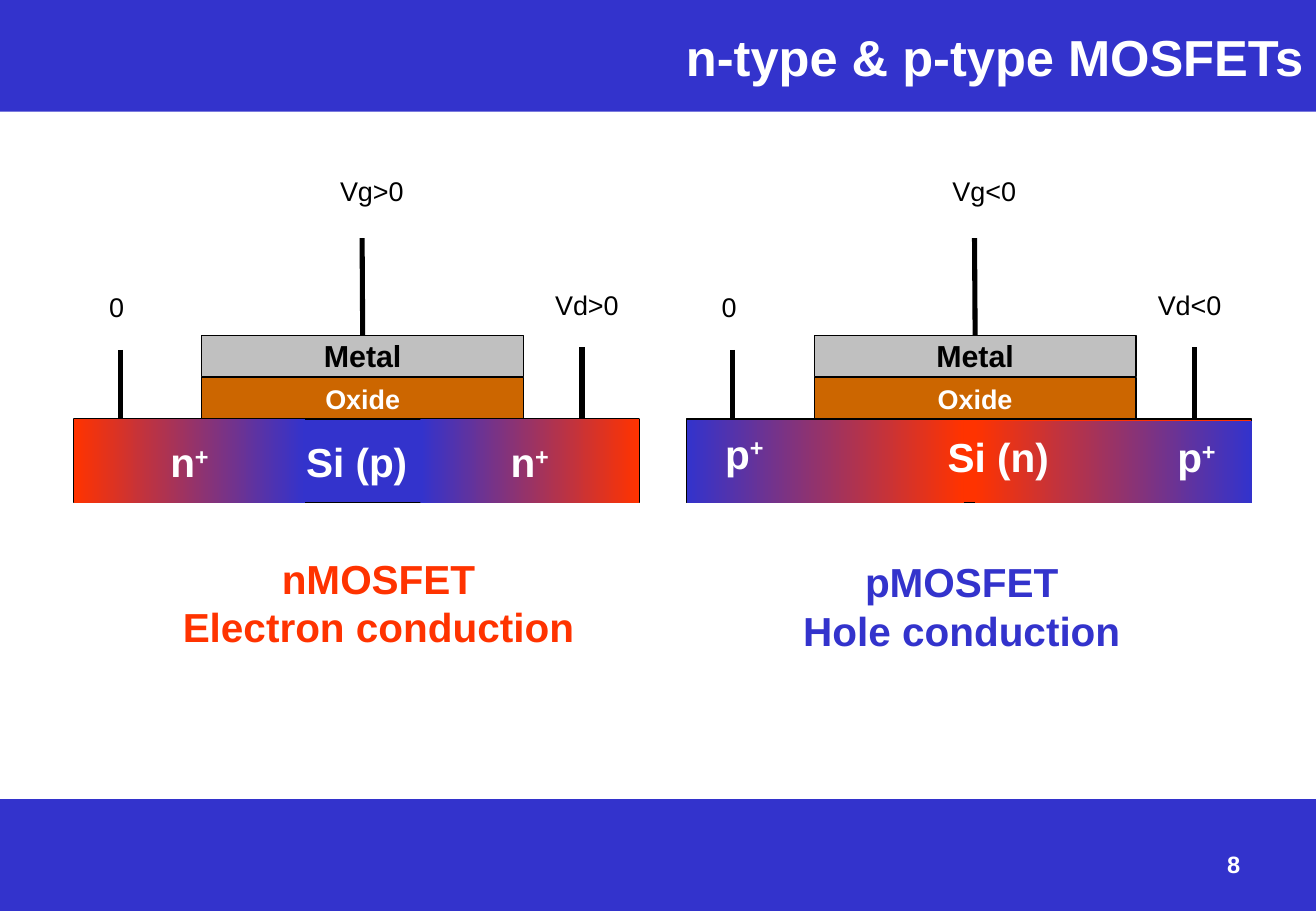
from lxml import etree
from pptx import Presentation
from pptx.dml.color import RGBColor
from pptx.enum.shapes import MSO_CONNECTOR, MSO_SHAPE
from pptx.enum.text import MSO_ANCHOR, MSO_AUTO_SIZE, PP_ALIGN
from pptx.oxml.ns import qn
from pptx.util import Inches, Pt

COLORS = {"blue": "3333CC", "red": "FF3300", "white": "FFFFFF",
          "black": "000000", "metal": "C0C0C0", "oxide": "CC6600"}
FONT = "Arial"
SLIDE_WIDTH, SLIDE_HEIGHT, BAND_HEIGHT = 10.83, 7.5, 0.92

TITLE = "n-type & p-type MOSFETs"
PAGE_NUMBER = "8"

# Boxes are (left, top, width, height); lefts within a device count from its substrate.
# Wells are (box, colour at left, colour at right, text).
# Labels are (text, box, size, colour, bold); "^" starts a superscript.
DEVICES = [
    {"left": 0.61, "substrate": ("blue", "Si (p)"),
     "wells": [((0, 3.45, 1.9, 0.69), "red", "blue", "n^+"),
               ((2.85, 3.45, 1.8, 0.69), "blue", "red", "n^+")],
     "labels": [("0", (0.19, 2.34, 0.32, 0.37), 16, "black", False),
                ("Vg>0", (2.09, 1.39, 0.73, 0.37), 16, "black", False),
                ("Vd>0", (3.86, 2.33, 0.73, 0.37), 16, "black", False)],
     "caption": (["nMOSFET", "Electron conduction"], (1.39, 4.51, 3.45, 0.91), "red")},
    {"left": 5.65, "substrate": ("red", ""),
     "wells": [((0, 3.46, 2.28, 0.68), "blue", "red", ""),
               ((2.37, 3.47, 2.28, 0.67), "red", "blue", "")],
     "labels": [("0", (0.19, 2.34, 0.32, 0.37), 16, "black", False),
                ("Vg<0", (2.09, 1.39, 0.73, 0.37), 16, "black", False),
                ("Vd<0", (3.78, 2.33, 0.73, 0.37), 16, "black", False),
                ("p^+", (0.22, 3.48, 0.53, 0.5), 24, "white", True),
                ("p^+", (3.94, 3.51, 0.53, 0.5), 24, "white", True),
                ("Si (n)", (2.05, 3.51, 1.03, 0.5), 24, "white", True)],
     "caption": (["pMOSFET", "Hole conduction"], (6.5, 4.54, 2.83, 0.91), "blue")},
]
SUBSTRATE_BOX = (0, 3.45, 4.65, 0.69)
GATE_LAYERS = [("Metal", (1.05, 2.76, 2.65, 0.34), "metal", 18, "black"),
               ("Oxide", (1.05, 3.11, 2.65, 0.34), "oxide", 16, "white")]
GATE_LEAD = (2.37, 1.96, 2.76)
SIDE_LEADS = [(0.38, 2.88, 3.45), (4.18, 2.86, 3.44)]


def rgb(name):
    return RGBColor.from_string(COLORS[name])


def shifted(box, offset):
    return (box[0] + offset, *box[1:])


def write(shape, lines, size, color, bold=True, align=PP_ALIGN.LEFT):
    frame = shape.text_frame
    frame.word_wrap = False
    for index, line in enumerate(lines):
        paragraph = frame.paragraphs[0] if index == 0 else frame.add_paragraph()
        paragraph.alignment = align
        for position, text in enumerate(line.split("^")):
            run = paragraph.add_run()
            run.text = text
            run.font.name, run.font.size, run.font.bold = FONT, Pt(size), bold
            run.font.color.rgb = rgb(color)
            if position:
                run.font._element.set("baseline", "30000")


def add_label(shapes, lines, box, size, color, bold=True, align=PP_ALIGN.LEFT):
    label = shapes.add_textbox(*map(Inches, box))
    write(label, lines, size, color, bold, align)
    label.text_frame.auto_size = MSO_AUTO_SIZE.SHAPE_TO_FIT_TEXT


def add_block(shapes, box, fill, text="", size=24, text_color="white", outlined=True):
    """Add a rectangle; a pair of fill colours makes a left-to-right gradient."""
    block = shapes.add_shape(MSO_SHAPE.RECTANGLE, *map(Inches, box))
    block.shadow.inherit = False
    if isinstance(fill, tuple):
        block.fill.gradient()
        block.fill.gradient_angle = 0
        for stop, position, color in zip(block.fill.gradient_stops, (0, 1), fill):
            stop.position = position
            stop.color.rgb = rgb(color)
    else:
        block.fill.solid()
        block.fill.fore_color.rgb = rgb(fill)
    if outlined:
        block.line.color.rgb = rgb("black")
        block.line.width = Pt(0.75)
    else:
        block.line.fill.background()
    if text:
        write(block, [text], size, text_color, align=PP_ALIGN.CENTER)
        block.text_frame.vertical_anchor = MSO_ANCHOR.MIDDLE
    return block


def add_lead(shapes, x, top, bottom):
    lead = shapes.add_connector(MSO_CONNECTOR.STRAIGHT, *map(Inches, (x, top, x, bottom)))
    lead.line.color.rgb = rgb("black")
    lead.line.width = Pt(3)
    etree.SubElement(lead._element.spPr, qn("a:effectLst"))
    return lead


def add_device(slide, device):
    shapes = slide.shapes.add_group_shape().shapes
    left = device["left"]
    layers = [add_block(shapes, shifted(box, left), fill, text, size, color)
              for text, box, fill, size, color in GATE_LAYERS]
    add_block(shapes, shifted(SUBSTRATE_BOX, left), *device["substrate"])
    for box, start, end, text in device["wells"]:
        add_block(shapes, shifted(box, left), (start, end), text, outlined=False)
    add_lead(shapes, *shifted(GATE_LEAD, left)).end_connect(layers[0], 0)
    for lead in SIDE_LEADS:
        add_lead(shapes, *shifted(lead, left))
    for text, box, size, color, bold in device["labels"]:
        add_label(shapes, [text], shifted(box, left), size, color, bold)
    lines, box, color = device["caption"]
    add_label(slide.shapes, lines, box, 24, color, align=PP_ALIGN.CENTER)


def add_title(slide):
    title = slide.shapes.title
    title.left, title.top = Inches(0), Inches(0)
    title.width, title.height = Inches(SLIDE_WIDTH), Inches(BAND_HEIGHT)
    title.fill.solid()
    title.fill.fore_color.rgb = rgb("blue")
    write(title, [TITLE], 30, "white", align=PP_ALIGN.RIGHT)
    frame = title.text_frame
    frame.word_wrap = True
    frame.auto_size = MSO_AUTO_SIZE.NONE
    frame.vertical_anchor = MSO_ANCHOR.MIDDLE


def main():
    presentation = Presentation()
    presentation.slide_width = Inches(SLIDE_WIDTH)
    presentation.slide_height = Inches(SLIDE_HEIGHT)
    slide = presentation.slides.add_slide(presentation.slide_layouts[5])
    add_title(slide)
    footer_box = (0, SLIDE_HEIGHT - BAND_HEIGHT, SLIDE_WIDTH, BAND_HEIGHT)
    add_block(slide.shapes, footer_box, "blue", outlined=False)
    add_label(slide.shapes, [PAGE_NUMBER], (10, 6.95, 0.34, 0.34), 14, "white")
    for device in DEVICES:
        add_device(slide, device)
    presentation.save("out.pptx")


if __name__ == "__main__":
    main()
